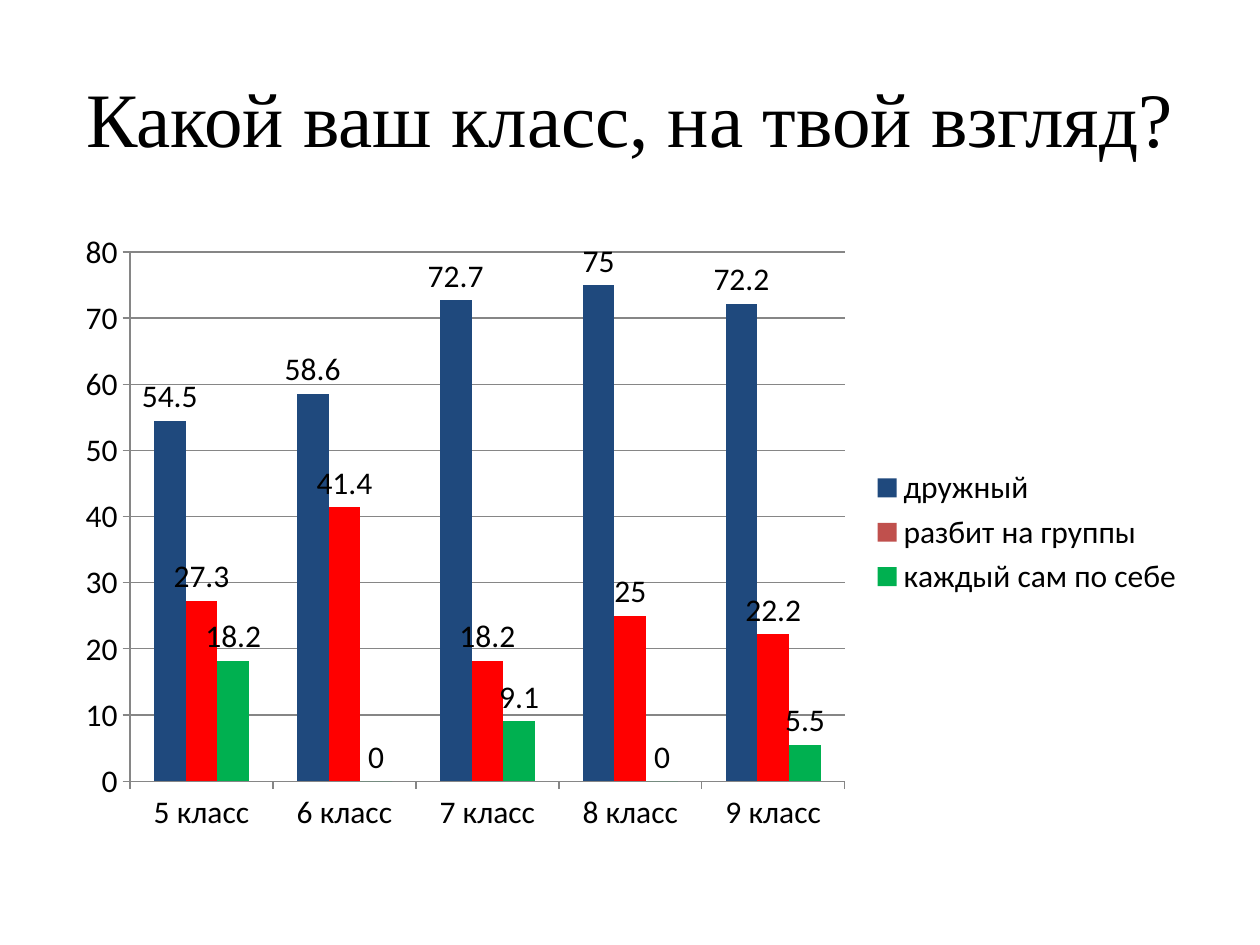
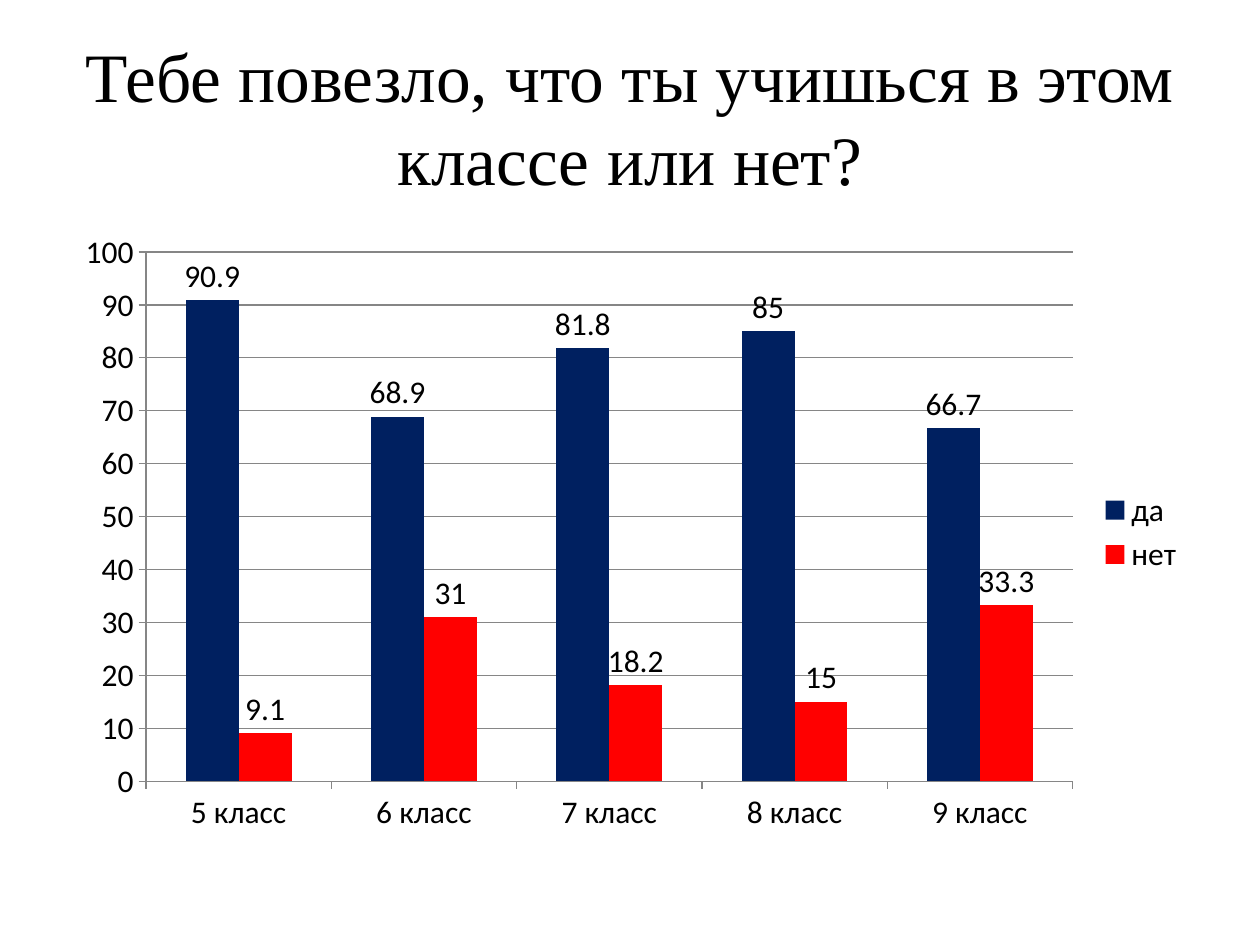
from pptx import Presentation
from pptx import util as u
from pptx.chart.data import CategoryChartData
from pptx.dml.color import RGBColor
from pptx.enum import chart as kinds, text

BLACK = RGBColor(0x00, 0x00, 0x00)
GREY = RGBColor(0x86, 0x86, 0x86)
BLUE = RGBColor(0x1F, 0x49, 0x7D)
NAVY = RGBColor(0x00, 0x20, 0x60)
RED = RGBColor(0xFF, 0x00, 0x00)
BRICK = RGBColor(0xC0, 0x50, 0x4D)
GREEN = RGBColor(0x00, 0xB0, 0x50)

WIDTH, HEIGHT = u.Inches(10), u.Inches(7.5)
TITLE_AREA = (0.05, 0.04, 0.9, 1 / 6)
CHART_AREA = (0.05, 7 / 30, 0.9, 0.66)
TITLE_FONT, CHART_FONT = "Times New Roman", "Calibri"
CLASSES = [f"{number} класс" for number in range(5, 10)]


def to_lengths(area):
    """Turn shares of the slide into left, top, width and height."""
    return [round(share * side) for share, side in zip(area, (WIDTH, HEIGHT) * 2)]


def style_font(font, name, size, color=BLACK):
    """Set the typeface, size and colour of a font."""
    font.name, font.size = name, u.Pt(size)
    font.color.rgb = color


def write(box, words, name=TITLE_FONT, size=44, align=text.PP_ALIGN.CENTER):
    """Write one formatted paragraph, centred vertically in the box."""
    frame = box.text_frame
    frame.word_wrap = True
    frame.auto_size = text.MSO_AUTO_SIZE.NONE
    frame.vertical_anchor = text.MSO_ANCHOR.MIDDLE
    para = frame.paragraphs[0]
    para.alignment = align
    span = para.add_run()
    span.text = words
    style_font(span.font, name, size)


def paint(item, color):
    """Give a series or a point a solid fill."""
    item.format.fill.solid()
    item.format.fill.fore_color.rgb = color


def draw_line(line):
    """Draw a thin grey chart line."""
    line.color.rgb = GREY
    line.width = u.Pt(0.75)


def style_axes(chart):
    """Set ticks, lines and gridlines of both axes."""
    for axis in (chart.category_axis, chart.value_axis):
        axis.major_tick_mark = kinds.XL_TICK_MARK.OUTSIDE
        axis.minor_tick_mark = kinds.XL_TICK_MARK.NONE
        draw_line(axis.format.line)
    chart.value_axis.has_major_gridlines = True
    draw_line(chart.value_axis.major_gridlines.format.line)


def add_columns(page, answers):
    """Add a clustered column chart of answers as name, colour and values."""
    data = CategoryChartData()
    data.categories = CLASSES
    for name, _, values in answers:
        data.add_series(name, values)
    chart = page.shapes.add_chart(
        kinds.XL_CHART_TYPE.COLUMN_CLUSTERED, *to_lengths(CHART_AREA), data).chart
    style_font(chart.font, CHART_FONT, 18)
    chart.has_title = False
    chart.has_legend = True
    chart.legend.position = kinds.XL_LEGEND_POSITION.RIGHT
    chart.legend.include_in_layout = False
    style_axes(chart)
    plot = chart.plots[0]
    plot.gap_width, plot.overlap = 150, 0
    plot.vary_by_categories = False
    for series, (_, color, _) in zip(plot.series, answers):
        series.invert_if_negative = False
        paint(series, color)
        series.data_labels.show_value = True
        series.data_labels.position = kinds.XL_LABEL_POSITION.OUTSIDE_END
    return chart


def add_question(deck, question, answers, size=44):
    """Add a slide with a question as title and a chart of its answers."""
    page = deck.slides.add_slide(deck.slide_layouts[5])
    title = page.shapes.title
    title.left, title.top, title.width, title.height = to_lengths(TITLE_AREA)
    write(title, question, size=size)
    return add_columns(page, answers)


def main():
    """Build the two survey slides and save the deck."""
    deck = Presentation()
    deck.slide_width, deck.slide_height = WIDTH, HEIGHT
    mood = add_question(deck, "Какой ваш класс, на твой взгляд?", [
        ("дружный", BLUE, (54.5, 58.6, 72.7, 75, 72.2)),
        ("разбит на группы", BRICK, (27.3, 41.4, 18.2, 25, 22.2)),
        ("каждый сам по себе", GREEN, (18.2, 0, 9.1, 0, 5.5)),
    ])
    groups = mood.plots[0].series[1]
    for index in range(len(CLASSES)):
        paint(groups.points[index], RED)
    add_question(deck, "Тебе повезло, что ты учишься в этом классе или нет?", [
        ("да", NAVY, (90.9, 68.9, 81.8, 85, 66.7)),
        ("нет", RED, (9.1, 31, 18.2, 15, 33.3)),
    ], size=39.6)
    deck.save("out.pptx")


if __name__ == "__main__":
    main()
